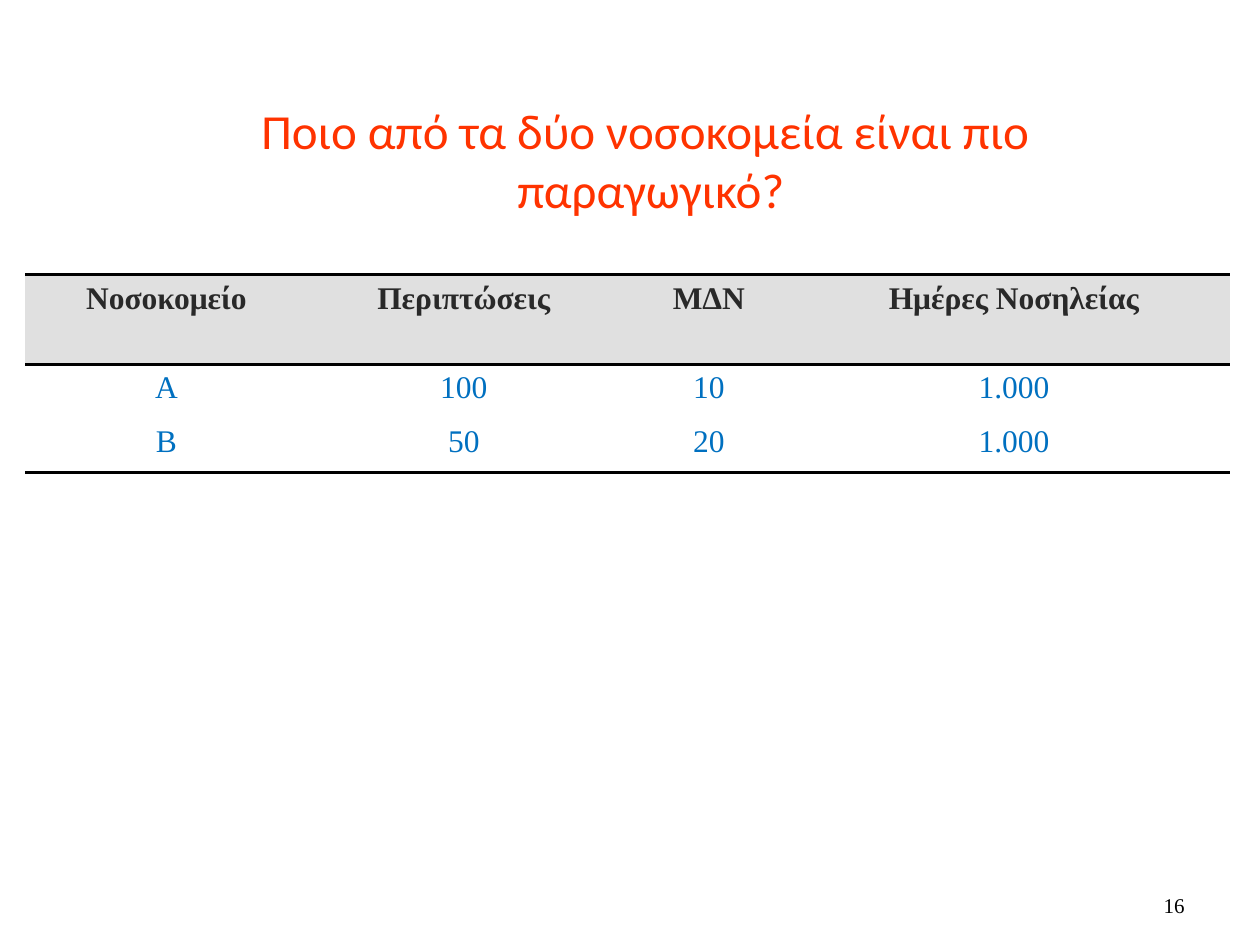
from pptx import Presentation
from pptx.dml.color import RGBColor
from pptx.enum.text import MSO_ANCHOR as Anchor, PP_ALIGN as Align
from pptx.oxml import parse_xml
from pptx.oxml.ns import nsdecls
from pptx.util import Cm, Pt

SERIF = "Times New Roman"
ROWS = [
    ["Νοσοκομείο", "Περιπτώσεις", "ΜΔΝ", "Ημέρες Νοσηλείας"],
    ["Α", "100", "10", "1.000"],
    ["Β", "50", "20", "1.000"],
]
WIDTHS = [5.69, 6.3, 3.58, 8.72]
HEIGHTS = [1.8, 1.09, 1.09]
HEAD = {"name": SERIF, "size": Pt(18), "bold": True}
BODY = {"name": SERIF, "size": Pt(18), "bold": False}


def tint(code):
    return RGBColor.from_string(code)


def write(para, text, look, color, align=Align.CENTER):
    para.alignment = align
    run = para.add_run()
    run.text = text
    for key, value in look.items():
        setattr(run.font, key, value)
    run.font.color.rgb = tint(color)


def edge(cell, sides):
    props = cell._tc.get_or_add_tcPr()
    for spot, side in enumerate("LRTB"):
        if side in sides:
            width, fill = Pt(2), '<a:solidFill><a:srgbClr val="000000"/></a:solidFill>'
        else:
            width, fill = 0, "<a:noFill/>"
        line = f'<a:ln{side} {nsdecls("a")} w="{width}">{fill}</a:ln{side}>'
        props.insert(spot, parse_xml(line))


def add_title(slide, x, y, w, h):
    frame = slide.shapes.add_textbox(Cm(x), Cm(y), Cm(w), Cm(h)).text_frame
    frame.word_wrap = False
    look = {"name": "Calibri", "size": Pt(28)}
    lines = ["Ποιο από τα δύο νοσοκομεία είναι πιο ", "παραγωγικό?"]
    for spot, text in enumerate(lines):
        para = frame.add_paragraph() if spot else frame.paragraphs[0]
        write(para, text, look, "FF3300")


def add_grid(slide, x, y):
    shape = slide.shapes.add_table(
        len(ROWS), len(WIDTHS), Cm(x), Cm(y), Cm(sum(WIDTHS)), Cm(sum(HEIGHTS))
    )
    table = shape.table
    table.first_row = table.horz_banding = False
    for col, width in zip(table.columns, WIDTHS):
        col.width = Cm(width)
    for row, height in zip(table.rows, HEIGHTS):
        row.height = Cm(height)
    for r, (row, sides) in enumerate(zip(ROWS, ["TB", "T", "B"])):
        for c, text in enumerate(row):
            cell = table.cell(r, c)
            if r == 0:
                cell.fill.solid()
                cell.fill.fore_color.rgb = tint("E0E0E0")
            else:
                cell.fill.background()
            edge(cell, sides)
            look, color = (BODY, "0070C0") if r else (HEAD, "292929")
            write(cell.text_frame.paragraphs[0], text, look, color)


def add_number(slide, x, y, w, h):
    frame = slide.shapes.add_textbox(Cm(x), Cm(y), Cm(w), Cm(h)).text_frame
    frame.word_wrap = True
    frame.vertical_anchor = Anchor.BOTTOM
    look = {"name": SERIF, "size": Pt(12)}
    write(frame.paragraphs[0], "16", look, "000000", Align.RIGHT)


def main():
    deck = Presentation()
    deck.slide_width, deck.slide_height = Cm(25.4), Cm(19.05)
    slide = deck.slides.add_slide(deck.slide_layouts[6])
    add_number(slide, 18.2, 17.35, 5.93, 1.27)
    add_grid(slide, 0.51, 5.54)
    add_title(slide, 3.38, 1.9, 19.48, 2.64)
    deck.save("out.pptx")


if __name__ == "__main__":
    main()
